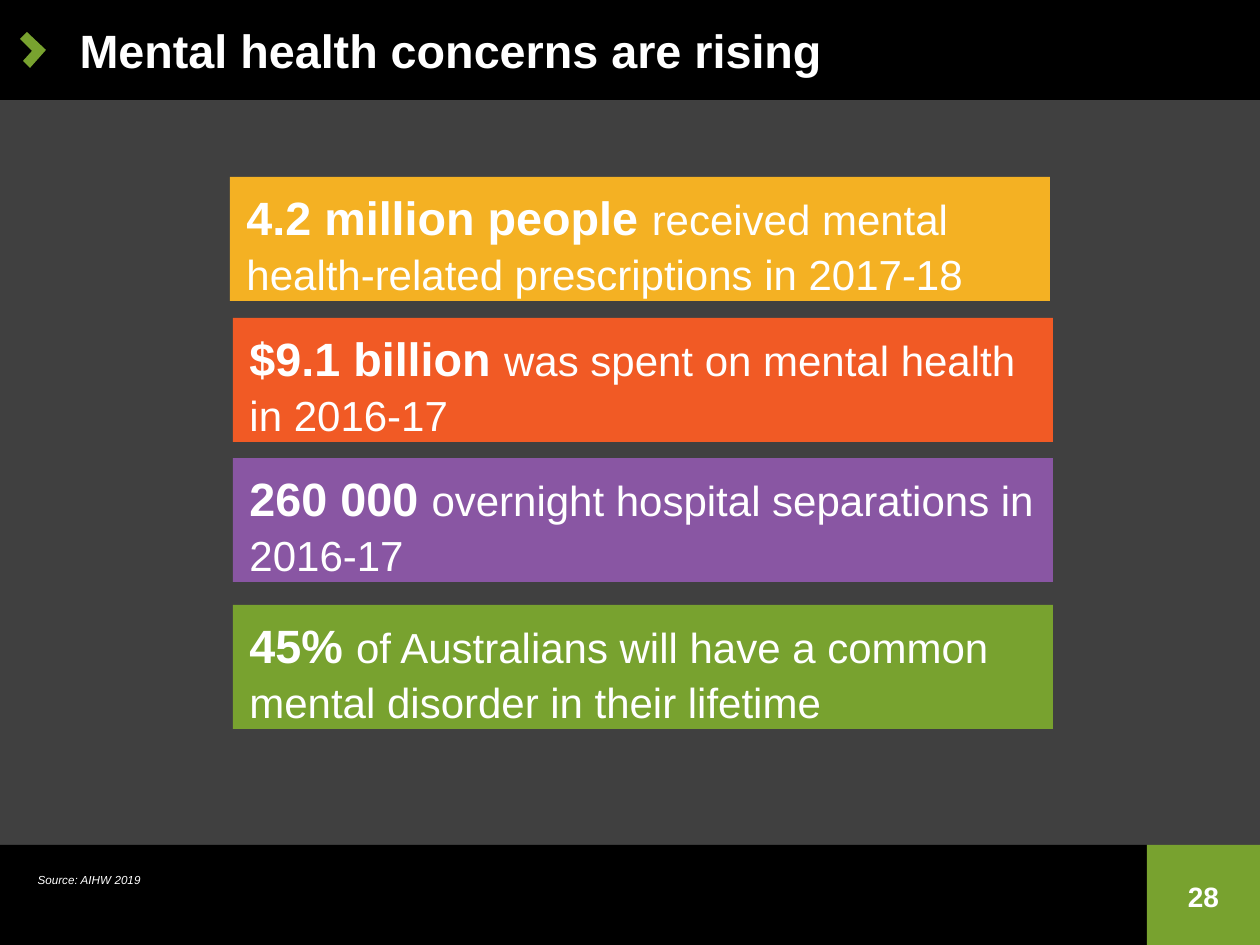
from pptx import Presentation
from pptx import util as u
from pptx.dml.color import RGBColor
from pptx.enum import shapes, text

BLACK = RGBColor(0, 0, 0)
GREY = RGBColor(0x40, 0x40, 0x40)
WHITE = RGBColor(255, 255, 255)
GREEN = RGBColor(0x78, 0xA2, 0x2F)
GOLD = RGBColor(0xF4, 0xB1, 0x23)
ORANGE = RGBColor(0xF1, 0x5A, 0x25)
PURPLE = RGBColor(0x89, 0x56, 0xA3)

WIDE, HIGH = 1260, 945
BAR = 100
FOOT = 845
FACTS = [
    (230, 177, GOLD, "4.2 million people ",
     "received mental health-related prescriptions in 2017-18"),
    (233, 318, ORANGE, "$9.1 billion ", "was spent on mental health in 2016-17"),
    (233, 458, PURPLE, "260 000 ", "overnight hospital separations in 2016-17"),
    (233, 605, GREEN, "45% ",
     "of Australians will have a common mental disorder in their lifetime"),
]


def px(n):
    return u.Emu(n * 914400 // 168)


def paint(shape, color):
    shape.shadow.inherit = False
    shape.fill.solid()
    shape.fill.fore_color.rgb = color
    shape.line.fill.background()


def block(slide, x, y, w, h, color):
    shape = slide.shapes.add_shape(
        shapes.MSO_SHAPE.RECTANGLE, px(x), px(y), px(w), px(h))
    paint(shape, color)
    return shape


def style(font, size):
    font.name = "Arial"
    font.size = u.Pt(size)
    font.color.rgb = WHITE


def label(slide, x, y, w, h, words, size, wrap=True):
    frame = slide.shapes.add_textbox(px(x), px(y), px(w), px(h)).text_frame
    frame.word_wrap = wrap
    para = frame.paragraphs[0]
    para.text = words
    style(para.font, size)
    return frame, para


def header(slide, x, y, w, h):
    block(slide, x, y, w, h, BLACK)
    pen = slide.shapes.build_freeform(x + 20, y + 39, scale=px(1))
    pen.add_line_segments(
        [(x + a, y + b) for a, b in
         [(27, 32), (46, 50), (30, 68), (23, 61), (32, 51)]])
    paint(pen.convert_to_shape(), GREEN)
    frame, para = label(slide, x + 63, y, w - 63, h,
                        "Mental health concerns are rising", 20)
    frame.vertical_anchor = text.MSO_ANCHOR.MIDDLE
    para.font.bold = True


def fact(slide, x, y, w, h, color, lead, rest):
    frame = block(slide, x, y, w, h, color).text_frame
    frame.word_wrap = True
    frame.vertical_anchor = text.MSO_ANCHOR.TOP
    para = frame.paragraphs[0]
    para.alignment = text.PP_ALIGN.LEFT
    para.line_spacing = 1.07
    for words, size, bold in [(lead, 20, True), (rest, 18, False)]:
        run = para.add_run()
        run.text = words
        style(run.font, size)
        run.font.bold = bold


def footer(slide, x, y, w, h):
    page = 113
    left = x + w - page
    block(slide, x, y, w - page, h, BLACK)
    block(slide, left, y, page, h, GREEN)
    frame, para = label(slide, left, y + 8, page, 86, "28", 12)
    frame.vertical_anchor = text.MSO_ANCHOR.MIDDLE
    para.alignment = text.PP_ALIGN.CENTER
    para.font.bold = True
    frame, para = label(slide, x + 21, y + 20, 138, 32,
                        "Source: AIHW 2019", 5, False)
    para.font.italic = True


def main():
    deck = Presentation()
    deck.slide_width, deck.slide_height = px(WIDE), px(HIGH)
    slide = deck.slides.add_slide(deck.slide_layouts[6])
    fill = slide.background.fill
    fill.solid()
    fill.fore_color.rgb = GREY
    header(slide, 0, 0, WIDE, BAR)
    footer(slide, 0, FOOT, WIDE, HIGH - FOOT)
    for x, y, color, lead, rest in FACTS:
        fact(slide, x, y, 820, 124, color, lead, rest)
    deck.save("out.pptx")


if __name__ == "__main__":
    main()
